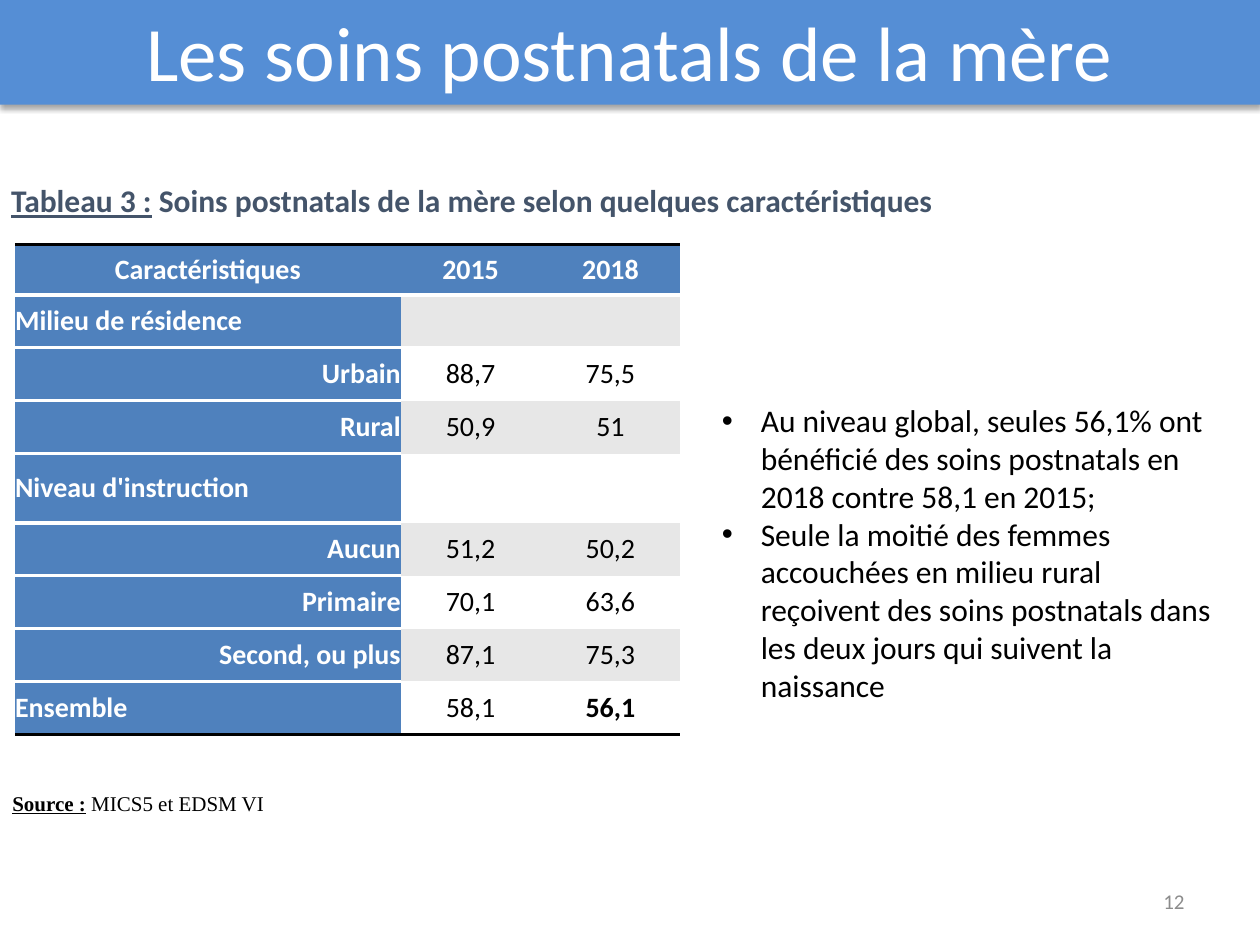
import lxml.etree
import pptx
import pptx.dml.color
import pptx.enum.text
import pptx.oxml
import pptx.oxml.ns
import pptx.util

Inches = pptx.util.Inches
Pt = pptx.util.Pt
ALIGN = pptx.enum.text.PP_ALIGN
MIDDLE = pptx.enum.text.MSO_ANCHOR.MIDDLE
qn = pptx.oxml.ns.qn
color = pptx.dml.color.RGBColor.from_string

THEME = {
    "banner": "558ED5", "header": "4F81BD", "band": "E7E7E7", "caption": "44546A",
    "number": "8C8C8C", "white": "FFFFFF", "black": "000000",
    "font": "Calibri", "source_font": "Times New Roman",
    "title_size": 44, "body_size": 18, "table_size": 16, "small_size": 12,
}


def style_paragraph(paragraph, size, text_color, align=None, bold=None, font="font"):
    paragraph.alignment = align
    paragraph.font.name = THEME[font]
    paragraph.font.size = Pt(THEME[size])
    paragraph.font.color.rgb = color(THEME[text_color])
    paragraph.font.bold = bold


def add_border(cell, side, position, line_color, width):
    properties = cell._tc.get_or_add_tcPr()
    line = lxml.etree.Element(qn("a:" + side), w=str(Pt(width)))
    fill = lxml.etree.SubElement(line, qn("a:solidFill"))
    lxml.etree.SubElement(fill, qn("a:srgbClr"), val=THEME[line_color])
    properties.insert(position, line)


presentation = pptx.Presentation()
presentation.slide_width = Inches(10)
presentation.slide_height = Inches(7.5)
slide = presentation.slides.add_slide(presentation.slide_layouts[5])

# Title banner with its soft shadow
title = slide.shapes.title
title.left, title.top = Inches(0), Inches(-0.02)
title.width, title.height = Inches(10), Inches(0.85)
title.fill.solid()
title.fill.fore_color.rgb = color(THEME["banner"])
title.text_frame.text = "Les soins postnatals de la mère"
title.text_frame.vertical_anchor = MIDDLE
title.text_frame.auto_size = pptx.enum.text.MSO_AUTO_SIZE.NONE
style_paragraph(title.text_frame.paragraphs[0], "title_size", "white", ALIGN.CENTER)
effects = lxml.etree.SubElement(title._element.spPr, qn("a:effectLst"))
shadow = lxml.etree.SubElement(effects, qn("a:outerShdw"), blurRad=str(Pt(3.1)),
                               dist=str(Pt(1.8)), dir="5400000", rotWithShape="0")
shadow_color = lxml.etree.SubElement(shadow, qn("a:srgbClr"), val=THEME["black"])
lxml.etree.SubElement(shadow_color, qn("a:alpha"), val="35000")

# Table caption and source: an underlined label, then its text
labelled_lines = [
    (-0.01, 1.39, 9.57, 0.4, "Tableau 3 :",
     " Soins postnatals de la mère selon quelques caractéristiques",
     "body_size", "caption", None, True, "font", 10, None),
    (0, 6.21, 5.07, 0.31, "Source\u00a0:", " MICS5 et EDSM VI",
     "small_size", "black", ALIGN.JUSTIFY, None, "source_font", 8, 1.07),
]
for (left, top, width, height, label, text, size, text_color,
     align, bold, font, space_after, line_spacing) in labelled_lines:
    box = slide.shapes.add_textbox(Inches(left), Inches(top), Inches(width), Inches(height))
    box.text_frame.word_wrap = True
    paragraph = box.text_frame.paragraphs[0]
    style_paragraph(paragraph, size, text_color, align, bold, font)
    paragraph.space_after = Pt(space_after)
    paragraph.line_spacing = line_spacing
    label_run = paragraph.add_run()
    label_run.text = label
    label_run.font.bold = True
    label_run.font.underline = True
    paragraph.add_run().text = text

# Table of postnatal care by characteristic
rows = [
    ("Caractéristiques", "2015", "2018"),
    ("Milieu de résidence", "", ""),
    ("Urbain", "88,7", "75,5"),
    ("Rural", "50,9", "51"),
    ("Niveau d'instruction", "", ""),
    ("Aucun", "51,2", "50,2"),
    ("Primaire", "70,1", "63,6"),
    ("Second, ou plus", "87,1", "75,3"),
    ("Ensemble", "58,1", "56,1"),
]
left_labels = ("Milieu de résidence", "Niveau d'instruction", "Ensemble")
last = len(rows) - 1
table = slide.shapes.add_table(len(rows), 3, Inches(0.12), Inches(1.94),
                               Inches(5.28), Inches(3.88)).table
no_style = "{2D5ABB26-0587-4C30-8999-92F81FD0307C}"
table._tbl.tblPr.find(qn("a:tableStyleId")).text = no_style
for column, width in zip(table.columns, (3.06, 1.11, 1.11)):
    column.width = Inches(width)
for row_index, values in enumerate(rows):
    table.rows[row_index].height = Inches({0: 0.4, 4: 0.55}.get(row_index, 0.42))
    for column_index, value in enumerate(values):
        cell = table.cell(row_index, column_index)
        cell.margin_left = cell.margin_right = cell.margin_top = cell.margin_bottom = 0
        cell.vertical_anchor = MIDDLE
        is_header = row_index == 0 or column_index == 0
        align = ALIGN.CENTER
        if column_index == 0 and row_index > 0:
            align = ALIGN.LEFT if value in left_labels else ALIGN.RIGHT
        cell.text = value
        style_paragraph(cell.text_frame.paragraphs[0], "table_size",
                        "white" if is_header else "black", align,
                        is_header or (row_index, column_index) == (last, 2))
        cell.fill.solid()
        band = "band" if row_index % 2 else "white"
        cell.fill.fore_color.rgb = color(THEME["header" if is_header else band])
        # Black rules close the table; white rules separate the header cells
        borders = []
        if row_index == 0:
            borders.append(("lnT", "black", 2))
        elif is_header or row_index == 1:
            borders.append(("lnT", "white", 2.25))
        if row_index == last:
            borders.append(("lnB", "black", 2))
        elif is_header:
            borders.append(("lnB", "white", 2.25))
        for position, (side, line_color, width) in enumerate(borders):
            add_border(cell, side, position, line_color, width)

# Comments beside the table
comments = [
    "Au niveau global, seules 56,1% ont bénéficié des soins postnatals en 2018 "
    "contre 58,1 en 2015;",
    "Seule la moitié des femmes accouchées en milieu rural reçoivent des soins "
    "postnatals dans les deux jours qui suivent la naissance",
]
box = slide.shapes.add_textbox(Inches(5.63), Inches(2.1), Inches(4.15), Inches(4.57))
box.text_frame.word_wrap = True
box.text_frame.vertical_anchor = MIDDLE
box.text_frame.text = "\n".join(comments)
for paragraph in box.text_frame.paragraphs:
    style_paragraph(paragraph, "body_size", "black")
    properties = paragraph._p.get_or_add_pPr()
    properties.set("marL", str(Inches(0.31)))
    properties.set("indent", str(Inches(-0.31)))
    bullet_font = lxml.etree.Element(qn("a:buFont"), typeface="Arial")
    bullet = lxml.etree.Element(qn("a:buChar"), char="•")
    properties.insert(0, bullet_font)
    properties.insert(1, bullet)

# Slide number
box = slide.shapes.add_textbox(Inches(7.17), Inches(6.95), Inches(2.33), Inches(0.4))
box.text_frame.word_wrap = True
box.text_frame.vertical_anchor = MIDDLE
box.text_frame.text = "12"
style_paragraph(box.text_frame.paragraphs[0], "small_size", "number", ALIGN.RIGHT)

presentation.save("out.pptx")
